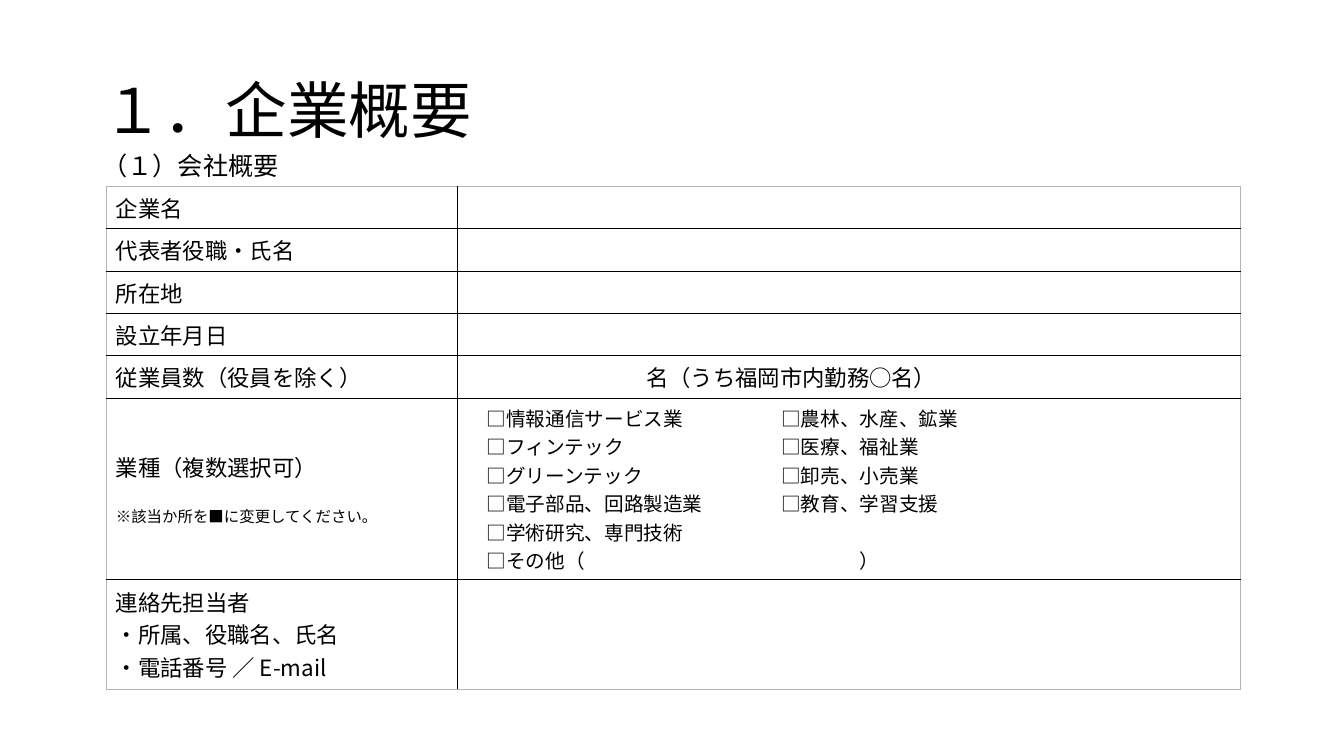
"""Build the company overview form slide."""
from lxml import etree
from pptx import Presentation
from pptx.dml.color import RGBColor
from pptx.enum.text import MSO_ANCHOR
from pptx.oxml.ns import qn
from pptx.util import Pt

BLACK = RGBColor(0x00, 0x00, 0x00)
GREY = RGBColor(0xB4, 0xB4, 0xB4)
FONT = "Noto Sans CJK JP"
MIDDLE = MSO_ANCHOR.MIDDLE
TOP = MSO_ANCHOR.TOP
BODY = {"size": Pt(16)}
NOTE = {"size": Pt(11)}
CHOICE = {"size": Pt(14)}
COLUMN_WIDTHS = (251.3, 559.4)
ROW_HEIGHTS = (30.25,) * 5 + (129.3, 78.5)
LABELS = (
    ("企業名",),
    ("代表者役職・氏名",),
    ("所在地",),
    ("設立年月日",),
    ("従業員数（役員を除く）",),
    ("業種（複数選択可）",),
    ("連絡先担当者", "・所属、役職名、氏名", "・電話番号 ／ E-mail"),
)
INDUSTRIES = (
    "\t□情報通信サービス業\t□農林、水産、鉱業",
    "\t□フィンテック\t□医療、福祉業",
    "\t□グリーンテック\t□卸売、小売業",
    "\t□電子部品、回路製造業\t□教育、学習支援",
    "\t□学術研究、専門技術",
)


def set_tab_stops(paragraph, positions):
    """Place left tab stops at the given points."""
    properties = paragraph._p.get_or_add_pPr()
    tab_list = etree.SubElement(properties, qn("a:tabLst"))
    for position in positions:
        etree.SubElement(tab_list, qn("a:tab"), pos=str(Pt(position)), algn="l")


def add_line(text_frame, text, font_format, paragraph_format=None, tabs=()):
    """Write one paragraph, using the empty first one when it is free."""
    paragraph = text_frame.paragraphs[0]
    if paragraph.runs:
        paragraph = text_frame.add_paragraph()
    for name, value in (paragraph_format or {}).items():
        setattr(paragraph, name, value)
    if tabs:
        set_tab_stops(paragraph, tabs)
    run = paragraph.add_run()
    run.text = text
    for name, value in {"name": FONT, **font_format}.items():
        setattr(run.font, name, value)
    run.font.color.rgb = BLACK
    etree.SubElement(run._r.get_or_add_rPr(), qn("a:ea"), typeface=FONT)


def add_heading(slide, box, text, size, paragraph_format=None):
    """Add a heading in a text box."""
    shape = slide.shapes.add_textbox(*map(Pt, box))
    text_frame = shape.text_frame
    text_frame.word_wrap = True
    text_frame.vertical_anchor = MIDDLE
    add_line(text_frame, text, {"size": Pt(size)}, paragraph_format)


def set_borders(cell, outer_sides):
    """Draw black inner borders and finer grey outer ones."""
    properties = cell._tc.get_or_add_tcPr()
    for index, (side, is_outer) in enumerate(outer_sides.items()):
        width, color = (0.5, GREY) if is_outer else (1, BLACK)
        line = etree.Element(qn(side), w=str(Pt(width)))
        fill = etree.SubElement(line, qn("a:solidFill"))
        etree.SubElement(fill, qn("a:srgbClr"), val=str(color))
        properties.insert(index, line)


def add_form_table(slide):
    """Add the empty form grid and return its table."""
    row_count, column_count = len(ROW_HEIGHTS), len(COLUMN_WIDTHS)
    frame = slide.shapes.add_table(
        row_count, column_count, Pt(75.6), Pt(133.2),
        Pt(sum(COLUMN_WIDTHS)), Pt(sum(ROW_HEIGHTS)))
    table = frame.table
    for name in ("first_row", "horz_banding"):
        setattr(table, name, False)
    for column, width in zip(table.columns, COLUMN_WIDTHS):
        column.width = Pt(width)
    for row, height in zip(table.rows, ROW_HEIGHTS):
        row.height = Pt(height)
    for index, cell in enumerate(table.iter_cells()):
        row, column = divmod(index, column_count)
        cell.fill.background()
        cell.vertical_anchor = MIDDLE
        set_borders(cell, {
            "a:lnL": column == 0,
            "a:lnR": column == column_count - 1,
            "a:lnT": row == 0,
            "a:lnB": row == row_count - 1,
        })
    return table


def fill_form(table):
    """Write the labels and the prepared answers."""
    for row, lines in enumerate(LABELS):
        for text in lines:
            add_line(table.cell(row, 0).text_frame, text, BODY)
    add_line(table.cell(5, 0).text_frame, "※該当か所を■に変更してください。",
             NOTE, {"space_before": Pt(16)})
    add_line(table.cell(4, 1).text_frame, "\t名（うち福岡市内勤務○名）",
             BODY, tabs=(127.5,))
    industry_cell = table.cell(5, 1)
    industry_cell.vertical_anchor = TOP
    for text in INDUSTRIES:
        add_line(industry_cell.text_frame, text, CHOICE, tabs=(13.5, 224))
    add_line(industry_cell.text_frame, "\t□その他（\t）", CHOICE,
             tabs=(13.5, 280))


def main():
    """Create and save the slide."""
    presentation = Presentation()
    presentation.slide_width = Pt(960)
    presentation.slide_height = Pt(540)
    slide = presentation.slides.add_slide(presentation.slide_layouts[6])
    add_heading(slide, (66, 28.75, 828, 104.4), "１．企業概要", 44,
                {"line_spacing": 0.9})
    fill_form(add_form_table(slide))
    add_heading(slide, (66, 103.7, 828, 29), "（１）会社概要", 18)
    presentation.save("out.pptx")


if __name__ == "__main__":
    main()
